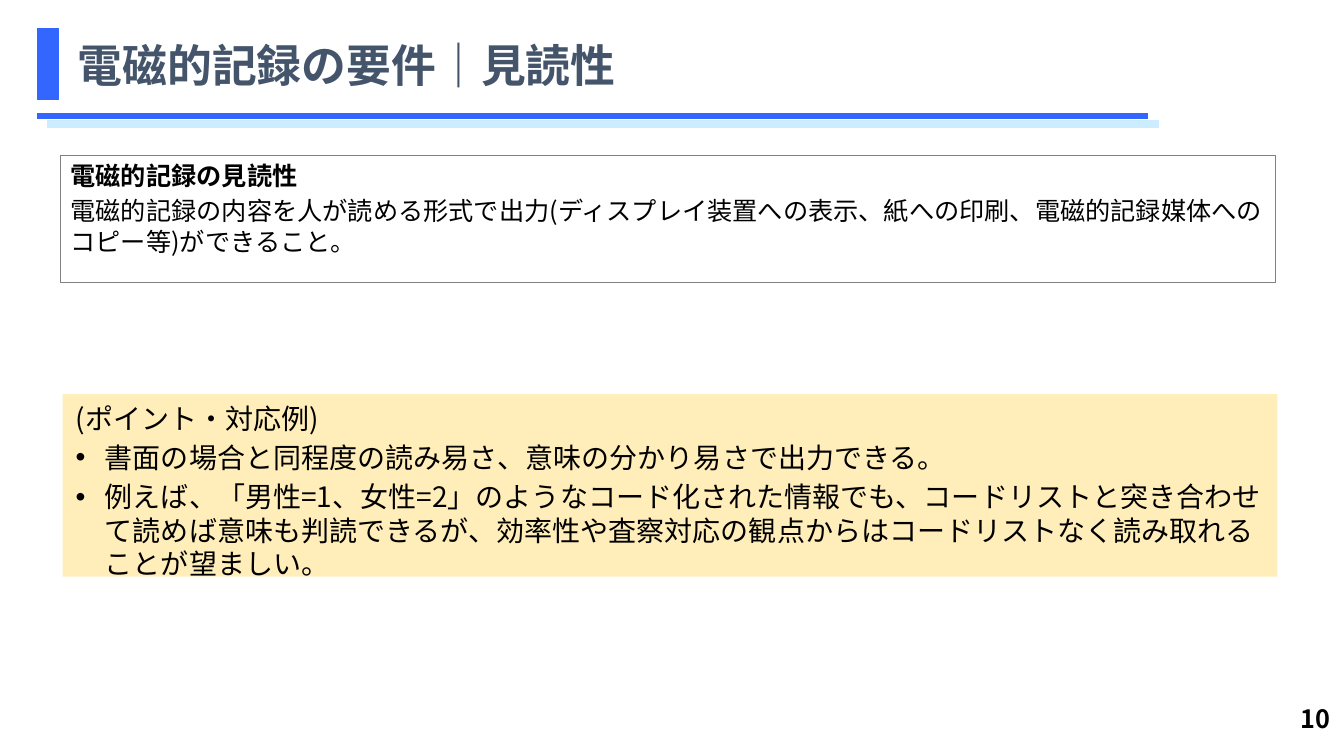
from lxml import etree
from pptx import Presentation
from pptx import util as u
from pptx.dml.color import RGBColor
from pptx.enum import shapes, text
from pptx.oxml.ns import qn

PX = u.Inches(1) // 100
FONT = "Noto Sans CJK JP"
BLUE = RGBColor(0x33, 0x66, 0xFF)
PALE_BLUE = RGBColor(0xCC, 0xEC, 0xFF)
CREAM = RGBColor(0xFF, 0xEE, 0xB9)
GREY = RGBColor(0x80, 0x80, 0x80)
SLATE = RGBColor(0x44, 0x54, 0x6A)
BLACK = RGBColor(0, 0, 0)


def px(*lengths):
    return [length * PX for length in lengths]


def write(paragraph, words, size, color=BLACK, bold=False, bullet=None,
          align=text.PP_ALIGN.LEFT, before=0):
    """Fill one paragraph; bullet is a character, or None for plain text."""
    paragraph.alignment = align
    paragraph.space_before = u.Pt(before)
    properties = paragraph._p.get_or_add_pPr()
    indent = 29 * PX if bullet else 0
    properties.set("marL", str(indent))
    properties.set("indent", str(-indent))
    if bullet:
        etree.SubElement(properties, qn("a:buFont")).set("typeface", "Arial")
        etree.SubElement(properties, qn("a:buChar")).set("char", bullet)
    else:
        etree.SubElement(properties, qn("a:buNone"))
    run = paragraph.add_run()
    run.text = words
    font = run.font
    font.name, font.size, font.bold = FONT, u.Pt(size), bold
    font.color.rgb = color
    east_asian = etree.SubElement(run._r.get_or_add_rPr(), qn("a:ea"))
    east_asian.set("typeface", FONT)


class Deck:
    def __init__(self, width, height):
        self.presentation = Presentation()
        self.presentation.slide_width, self.presentation.slide_height = px(width, height)
        self.slide = self.presentation.slides.add_slide(
            self.presentation.slide_layouts[1])

    def place(self, shape, box):
        shape.left, shape.top, shape.width, shape.height = px(*box)
        return shape

    def fill_text(self, shape, paragraphs, size, anchor=text.MSO_ANCHOR.TOP,
                  inset=(10, 5), **style):
        """Write (words, own format) pairs, spaced by a fifth of the text size."""
        frame = shape.text_frame
        frame.word_wrap = True
        frame.auto_size = text.MSO_AUTO_SIZE.NONE
        frame.vertical_anchor = anchor
        frame.margin_left = frame.margin_right = inset[0] * PX
        frame.margin_top = frame.margin_bottom = inset[1] * PX
        for i, (words, own) in enumerate(paragraphs):
            paragraph = frame.add_paragraph() if i else frame.paragraphs[0]
            write(paragraph, words, size, before=size / 5 if i else 0,
                  **{**style, **own})

    def title(self, words, box):
        self.fill_text(self.place(self.slide.shapes.title, box), [(words, {})], 32,
                       anchor=text.MSO_ANCHOR.MIDDLE, color=SLATE, bold=True)

    def body(self, paragraphs, box):
        definition = self.place(self.slide.placeholders[1], box)
        definition.line.color.rgb = GREY
        definition.line.width = u.Pt(0.75)
        self.fill_text(definition, paragraphs, 18)

    def rectangle(self, box, fill, outlined=False):
        shape = self.slide.shapes.add_shape(shapes.MSO_SHAPE.RECTANGLE, *px(*box))
        shape.shadow.inherit = False
        shape.fill.solid()
        shape.fill.fore_color.rgb = fill
        if outlined:
            shape.line.color.rgb = fill
            shape.line.width = u.Pt(0.75)
        else:
            shape.line.fill.background()
        return shape

    def rule(self, left, right, y, color, weight):
        line = self.slide.shapes.add_connector(
            shapes.MSO_CONNECTOR.STRAIGHT, *px(left, y, right, y))
        line.line.color.rgb = color
        line.line.width = u.Pt(weight)
        etree.SubElement(line._element.spPr, qn("a:effectLst"))

    def number(self, words, box):
        page = self.slide.shapes.add_textbox(*px(*box))
        self.fill_text(page, [(words, {})], 18, bold=True, align=text.PP_ALIGN.RIGHT)


def main():
    deck = Deck(1333, 750)
    deck.rule(37, 1139, 115, BLUE, 4.5)
    deck.rectangle((37, 28, 21, 71), BLUE, outlined=True)
    deck.rule(47, 1150, 123, PALE_BLUE, 6)
    deck.title("電磁的記録の要件｜見読性", (67, 21, 1200, 87))
    deck.body([
        ("電磁的記録の見読性", {"bold": True}),
        ("電磁的記録の内容を人が読める形式で出力(ディスプレイ装置への表示、"
         "紙への印刷、電磁的記録媒体へのコピー等)ができること。", {}),
    ], (60, 154, 1205, 126))
    points = deck.rectangle((62, 391, 1205, 181), CREAM)
    deck.fill_text(points, [
        ("(ポイント・対応例)", {}),
        ("書面の場合と同程度の読み易さ、意味の分かり易さで出力できる。", {"bullet": "•"}),
        ("例えば、「男性=1、女性=2」のようなコード化された情報でも、"
         "コードリストと突き合わせて読めば意味も判読できるが、"
         "効率性や査察対応の観点からはコードリストなく読み取れることが望ましい。",
         {"bullet": "•"}),
    ], 20, inset=(13, 7))
    deck.number("10", (1201, 693, 128, 52))
    deck.presentation.save("out.pptx")


if __name__ == "__main__":
    main()
